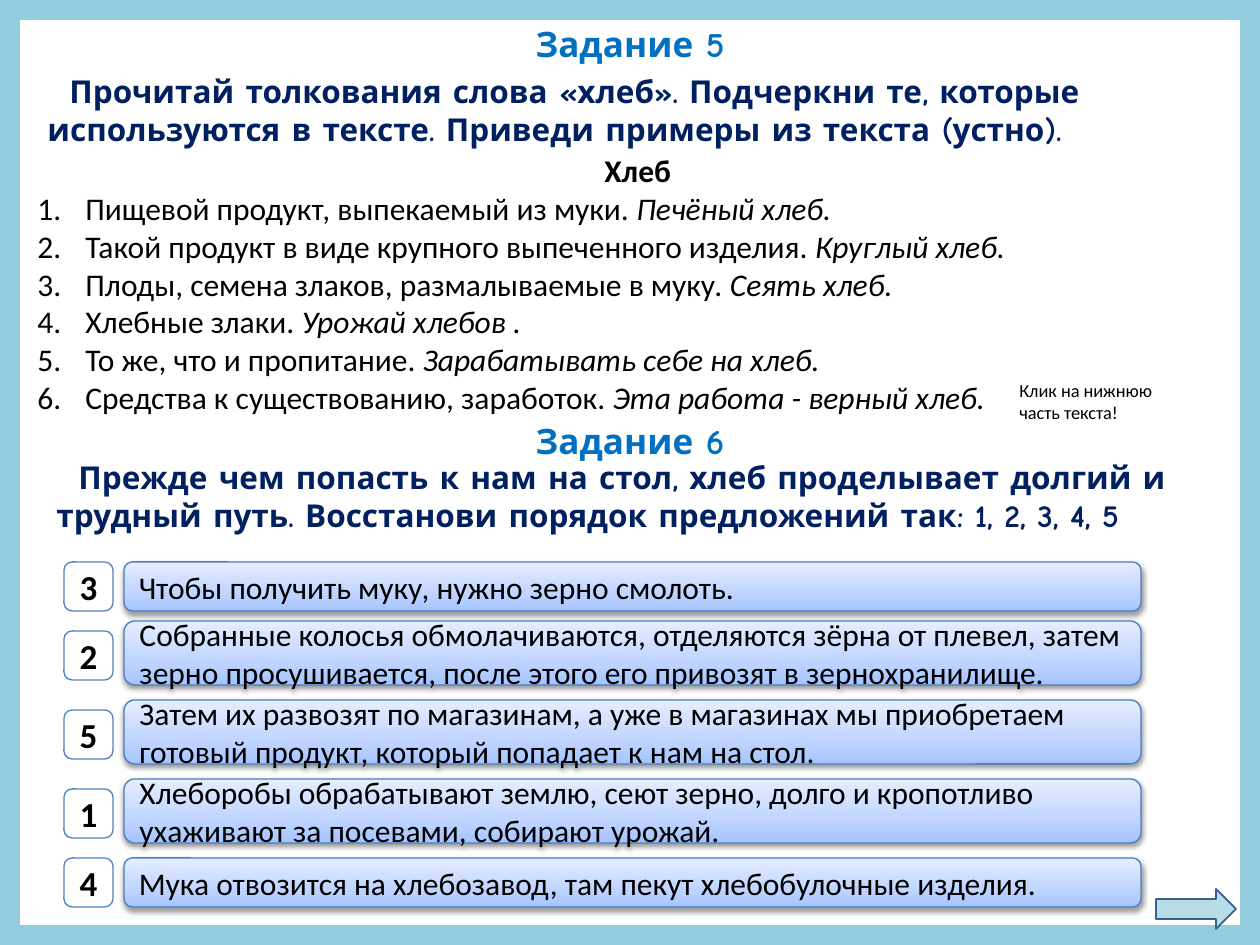
from lxml.etree import SubElement
from pptx import Presentation
from pptx.dml.color import RGBColor
from pptx.enum.shapes import MSO_SHAPE as SHAPE
from pptx.enum.text import MSO_ANCHOR as ANCHOR, PP_ALIGN as ALIGN
from pptx.oxml.ns import qn
from pptx.util import Pt

SCALE = 914400 / 126
FRAME = RGBColor(0x93, 0xCD, 0xDD)
TITLE = RGBColor(0x00, 0x70, 0xC0)
TASK = RGBColor(0x00, 0x20, 0x60)
BLACK = RGBColor(0x00, 0x00, 0x00)
WHITE = RGBColor(0xFF, 0xFF, 0xFF)
BAR_LINE = RGBColor(0x4B, 0x7E, 0xBC)
NUMBER_LINE = RGBColor(0x4F, 0x81, 0xBD)
ARROW = RGBColor(0xB7, 0xDE, 0xE8)
ARROW_LINE = RGBColor(0x3A, 0x5F, 0x8C)
BAR_STOPS = [
    (0, RGBColor(0xA4, 0xC4, 0xFF)),
    (35, RGBColor(0xBF, 0xD4, 0xFF)),
    (100, RGBColor(0xE6, 0xEE, 0xFF)),
]
BODY, DISPLAY = "Calibri", "Comic Neue"

TITLES = [("Задание 5", 16), ("Задание 6", 413)]
TASKS = [
    ("Прочитай толкования слова «хлеб». Подчеркни те, которые используются "
     "в тексте. Приведи примеры из текста (устно).", (35, 66, 1150, 89)),
    ("Прежде чем попасть к нам на стол, хлеб проделывает долгий и трудный путь. "
     "Восстанови порядок предложений так: 1, 2, 3, 4, 5", (44, 452, 1181, 89)),
]
WORD = "Хлеб"
MEANINGS = [
    ("Пищевой продукт, выпекаемый из муки. ", "Печёный хлеб."),
    ("Такой продукт в виде крупного выпеченного изделия. ", "Круглый хлеб."),
    ("Плоды, семена злаков, размалываемые в муку. ", "Сеять хлеб."),
    ("Хлебные злаки. ", "Урожай хлебов ."),
    ("То же, что и пропитание. ", "Зарабатывать себе на хлеб."),
    ("Средства к существованию, заработок. ", "Эта работа - верный хлеб."),
]
HINT = "Клик на нижнюю часть текста!"
SENTENCES = [
    ("3", "Чтобы получить муку, нужно зерно смолоть.", 1),
    ("2", "Собранные колосья обмолачиваются, отделяются зёрна от плевел, затем "
          "зерно просушивается, после этого его привозят в зернохранилище.", 2),
    ("5", "Затем их развозят по магазинам, а уже в магазинах мы приобретаем "
          "готовый продукт, который попадает к нам на стол.", 2),
    ("1", "Хлеборобы обрабатывают землю, сеют зерно, долго и кропотливо "
          "ухаживают за посевами, собирают урожай.", 2),
    ("4", "Мука отвозится на хлебозавод, там пекут хлебобулочные изделия.", 1),
]
FIRST_TOP, NUMBER_SIZE = 562, 49
BAR_HEIGHT = {1: 49, 2: 64}
BAR_GAP = {1: 10, 2: 15}
NUMBER_DROP = {1: 0, 2: 10}


def px(n):
    return round(n * SCALE)


def add_run(p, text, size, color=BLACK, font=BODY, bold=False, italic=False):
    r = p.add_run()
    r.text = text
    r.font.size, r.font.name = Pt(size), font
    r.font.bold, r.font.italic = bold, italic
    r.font.color.rgb = color


def set_indent(p, left, first):
    pPr = p._p.get_or_add_pPr()
    pPr.set("marL", str(px(left)))
    pPr.set("indent", str(px(first)))
    return pPr


def add_text(slide, *box):
    tf = slide.shapes.add_textbox(*map(px, box)).text_frame
    tf.word_wrap = True
    return tf


def add_box(slide, kind, box, fill, line=None, width=0.75):
    s = slide.shapes.add_shape(kind, *map(px, box))
    s.shadow.inherit = False
    s.fill.solid()
    s.fill.fore_color.rgb = fill
    if line is None:
        s.line.fill.background()
    else:
        s.line.color.rgb = line
        s.line.width = Pt(width)
    s.text_frame.vertical_anchor = ANCHOR.MIDDLE
    return s


def add_color(parent, color):
    return SubElement(parent, qn("a:srgbClr"), val=str(color))


def style_bar(s):
    s.fill.gradient()
    s.fill.gradient_angle = 90
    spPr = s._element.spPr
    stops = spPr.find(".//" + qn("a:gsLst"))
    for stop in list(stops):
        stops.remove(stop)
    for pos, color in BAR_STOPS:
        add_color(SubElement(stops, qn("a:gs"), pos=str(pos * 1000)), color)
    shadow = SubElement(spPr.find(qn("a:effectLst")), qn("a:outerShdw"),
                        blurRad=str(Pt(3.1)), dist=str(Pt(1.6)),
                        dir="5400000", rotWithShape="0")
    SubElement(add_color(shadow, BLACK), qn("a:alpha"), val="38000")


def add_meanings(slide):
    tf = add_text(slide, 25, 145, 1181, 280)
    p = tf.paragraphs[0]
    set_indent(p, 567, 0)
    add_run(p, WORD, 18, bold=True)
    for meaning, example in MEANINGS:
        p = tf.add_paragraph()
        pPr = set_indent(p, 48, -48)
        SubElement(pPr, qn("a:buFont"), typeface="+mj-lt")
        SubElement(pPr, qn("a:buAutoNum"), type="arabicPeriod")
        add_run(p, meaning, 18)
        add_run(p, example, 18, italic=True)


def add_sentences(slide):
    top = FIRST_TOP
    for number, sentence, lines in SENTENCES:
        height = BAR_HEIGHT[lines]
        s = add_box(slide, SHAPE.ROUNDED_RECTANGLE, (124, top, 1017, height),
                    WHITE, BAR_LINE)
        style_bar(s)
        p = s.text_frame.paragraphs[0]
        p.alignment = ALIGN.LEFT
        add_run(p, sentence, 18)

        box = (64, top + NUMBER_DROP[lines], NUMBER_SIZE, NUMBER_SIZE)
        s = add_box(slide, SHAPE.ROUNDED_RECTANGLE, box, WHITE, NUMBER_LINE)
        p = s.text_frame.paragraphs[0]
        p.alignment = ALIGN.CENTER
        add_run(p, number, 20, bold=True)
        top += height + BAR_GAP[lines]


def main():
    prs = Presentation()
    prs.slide_width, prs.slide_height = px(1260), px(945)
    slide = prs.slides.add_slide(prs.slide_layouts[6])

    frame = add_box(slide, SHAPE.FRAME, (0, 0, 1260, 945), FRAME)
    frame.adjustments[0] = 0.021
    for title, top in TITLES:
        p = add_text(slide, 521, top, 218, 55).paragraphs[0]
        p.alignment = ALIGN.CENTER
        add_run(p, title, 20, TITLE, DISPLAY, bold=True)
    add_meanings(slide)
    for task, box in TASKS:
        p = add_text(slide, *box).paragraphs[0]
        set_indent(p, 0, 22)
        add_run(p, task, 18, TASK, DISPLAY, bold=True)
    add_sentences(slide)
    add_box(slide, SHAPE.RIGHT_ARROW, (1156, 889, 80, 40), ARROW, ARROW_LINE, 1)
    add_run(add_text(slide, 1007, 373, 189, 57).paragraphs[0], HINT, 10.5)

    prs.save("out.pptx")


if __name__ == "__main__":
    main()
